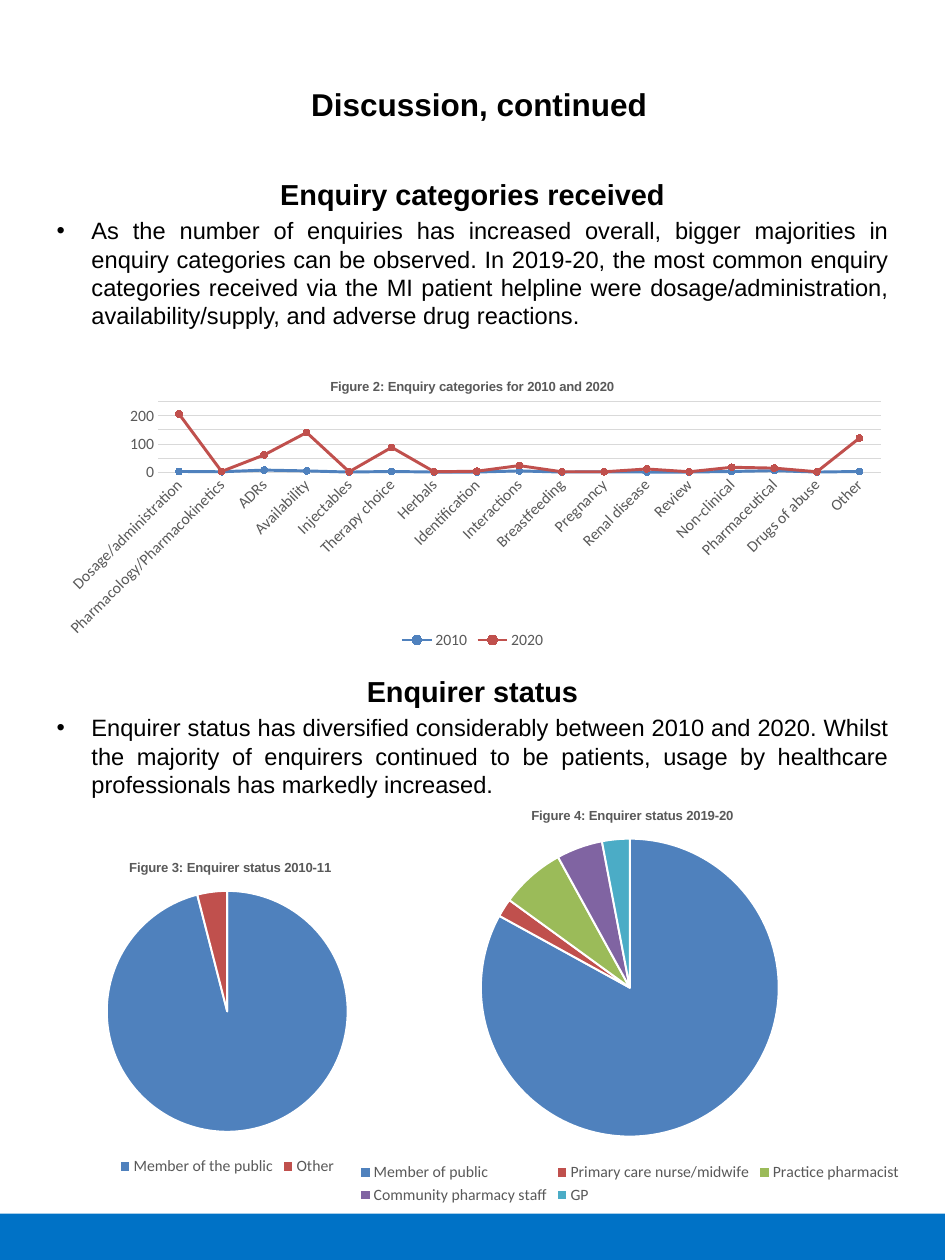
import pptx
import pptx.chart.data
import pptx.dml.color
import pptx.enum.chart
import pptx.enum.shapes
import pptx.enum.text
import pptx.oxml.ns
import pptx.oxml.xmlchemy
import pptx.util

Inches = pptx.util.Inches
Pt = pptx.util.Pt
qn = pptx.oxml.ns.qn
ALIGN = pptx.enum.text.PP_ALIGN
CHART = pptx.enum.chart.XL_CHART_TYPE


def rgb(value):
    """Turn a hex string into a colour."""
    return pptx.dml.color.RGBColor.from_string(value)


def sub(parent, tag, index=None, **attrs):
    """Add an XML child with attributes, at the end or at an index."""
    el = pptx.oxml.xmlchemy.OxmlElement(tag)
    for name, value in attrs.items():
        el.set(name, str(value))
    parent.insert(len(parent) if index is None else index, el)
    return el


def set_layout(parent, index, **values):
    """Give a chart part a manual layout in fractions of the chart."""
    for old in parent.findall(qn("c:layout")):
        parent.remove(old)
    manual = sub(sub(parent, "c:layout", index), "c:manualLayout")
    if "w" in values:
        sub(manual, "c:layoutTarget", val="inner")
    for mode in ("xMode", "yMode"):
        sub(manual, f"c:{mode}", val="edge")
    for name, value in values.items():
        sub(manual, f"c:{name}", val=value)


class Poster:
    """Style and current slide of the poster."""

    font = "Arial"
    chart_font = "Calibri"
    text = "000000"
    muted = "595959"
    rule = "D9D9D9"
    bar_fill = "0072C6"
    palette = ("4F81BD", "C0504D", "9BBB59", "8064A2", "4BACC6")

    def __init__(self, slide):
        """Keep the slide to draw on."""
        self.slide = slide

    def style(self, font, size, color, name, bold=False):
        """Set the look of a font."""
        font.size, font.name, font.bold = Pt(size), name, bold
        font.color.rgb = rgb(color)

    def bar(self, *box):
        """Draw a plain filled band."""
        sp = self.slide.shapes.add_shape(
            pptx.enum.shapes.MSO_SHAPE.RECTANGLE, *map(Inches, box))
        sp.shadow.inherit = False
        sp.fill.solid()
        sp.fill.fore_color.rgb = rgb(self.bar_fill)
        sp.line.fill.background()

    def run(self, p, text, size, bold):
        """Add a styled run to a paragraph."""
        r = p.add_run()
        r.text = text
        self.style(r.font, size, self.text, self.font, bold)

    def heading(self, box, text, size=22):
        """Add a text box with a centred heading and return its frame."""
        tf = self.slide.shapes.add_textbox(*map(Inches, box)).text_frame
        tf.word_wrap = True
        p = tf.paragraphs[0]
        p.alignment = ALIGN.CENTER
        self.run(p, text, size, True)
        return tf

    def section(self, box, title, body):
        """Add a heading followed by a justified bullet."""
        p = self.heading(box, title).add_paragraph()
        p.alignment = ALIGN.JUSTIFY
        pPr = p._p.get_or_add_pPr()
        pPr.set("marL", str(Inches(0.37)))
        pPr.set("indent", str(-Inches(0.37)))
        sub(pPr, "a:buFont", typeface=self.font)
        sub(pPr, "a:buChar", char="•")
        p.space_before = Pt(3.6)
        self.run(p, body, 18, False)

    def chart(self, kind, box, title, title_at, plot_at, cats, series):
        """Add a chart with title and legend and return it."""
        data = pptx.chart.data.CategoryChartData()
        data.categories = cats
        for name, values in series.items():
            data.add_series(name, values)
        chart = self.slide.shapes.add_chart(kind, *map(Inches, box), data).chart
        self.style(chart.font, 10, self.text, self.chart_font)
        chart.has_title = True
        r = chart.chart_title.text_frame.paragraphs[0].add_run()
        r.text = title
        self.style(r.font, 10, self.muted, self.font, True)
        set_layout(chart.chart_title._element, 1, **dict(zip("xy", title_at)))
        area = chart._chartSpace.find(f".//{qn('c:plotArea')}")
        set_layout(area, 0, **dict(zip("xywh", plot_at)))
        chart.has_legend = True
        chart.legend.position = pptx.enum.chart.XL_LEGEND_POSITION.BOTTOM
        chart.legend.include_in_layout = False
        self.style(chart.legend.font, 12, self.muted, self.chart_font)
        return chart

    def line_chart(self, *args):
        """Add a stacked line chart with round markers."""
        chart = self.chart(CHART.LINE_MARKERS_STACKED, *args)
        chart.plots[0].vary_by_categories = False
        for s, color in zip(chart.plots[0].series, self.palette):
            s.smooth = False
            s.format.line.color.rgb = rgb(color)
            s.format.line.width = Pt(2.25)
            s.marker.style = pptx.enum.chart.XL_MARKER_STYLE.CIRCLE
            s.marker.size = 5
            s.marker.format.fill.solid()
            s.marker.format.fill.fore_color.rgb = rgb(color)
            s.marker.format.line.color.rgb = rgb(color)
        cat, val = chart.category_axis, chart.value_axis
        for axis in (cat, val):
            axis.major_tick_mark = pptx.enum.chart.XL_TICK_MARK.NONE
            axis.minor_tick_mark = pptx.enum.chart.XL_TICK_MARK.NONE
            self.style(axis.tick_labels.font, 12, self.muted, self.chart_font)
        cat._element.find(f".//{qn('a:bodyPr')}").set("rot", "-2700000")
        val.minimum_scale, val.maximum_scale, val.major_unit = 0, 250, 50
        val.format.line.fill.background()
        val.has_major_gridlines = True
        for line in (cat.format.line, val.major_gridlines.format.line):
            line.color.rgb = rgb(self.rule)
            line.width = Pt(0.75)

    def pie_chart(self, *args):
        """Add a pie chart with white slice borders."""
        chart = self.chart(CHART.PIE, *args)
        chart.plots[0].vary_by_categories = True
        s = chart.plots[0].series[0]
        for i, color in zip(range(len(s.values)), self.palette):
            fmt = s.points[i].format
            fmt.fill.solid()
            fmt.fill.fore_color.rgb = rgb(color)
            fmt.line.color.rgb = rgb("FFFFFF")
            fmt.line.width = Pt(1.5)


def main():
    """Build the slide and save it."""
    prs = pptx.Presentation()
    prs.slide_width, prs.slide_height = Inches(10), Inches(13.33)
    poster = Poster(prs.slides.add_slide(prs.slide_layouts[6]))

    poster.bar(0, 12.84, 10, 0.49)
    poster.section(
        (0.5, 1.82, 9, 1.81), "Enquiry categories received",
        "As the number of enquiries has increased overall, bigger majorities in "
        "enquiry categories can be observed. In 2019-20, the most common enquiry "
        "categories received via the MI patient helpline were "
        "dosage/administration, availability/supply, and adverse drug reactions.")
    poster.line_chart(
        (0.5, 3.82, 9, 3.09), "Figure 2: Enquiry categories for 2010 and 2020",
        (0.33, 0.05), (0.13, 0.14, 0.85, 0.24),
        ["Dosage/administration", "Pharmacology/Pharmacokinetics", "ADRs",
         "Availability", "Injectables", "Therapy choice", "Herbals",
         "Identification", "Interactions", "Breastfeeding", "Pregnancy",
         "Renal disease", "Review", "Non-clinical", "Pharmaceutical",
         "Drugs of abuse", "Other"],
        {"2010": [2, 1, 7, 4, 0, 2, 0, 0, 4, 0, 1, 0, 0, 2, 5, 0, 2],
         "2020": [205, 1, 54, 137, 1, 86, 1, 3, 19, 1, 0, 11, 1, 15, 9, 1, 119]})
    poster.section(
        (0.5, 7.08, 9, 1.66), "Enquirer status",
        "Enquirer status has diversified considerably between 2010 and 2020. "
        "Whilst the majority of enquirers continued to be patients, usage by "
        "healthcare professionals has markedly increased.")
    poster.pie_chart(
        (0.28, 8.92, 4.25, 3.56), "Figure 3: Enquirer status 2010-11",
        (0.25, 0.04), (0.2, 0.14, 0.6, 0.72),
        ["Member of the public", "Other"], {"Series 1": [96, 4]})
    poster.pie_chart(
        (3.33, 8.34, 6.67, 4.44), "Figure 4: Enquirer status 2019-20",
        (0.34, 0.04), (0.26, 0.12, 0.48, 0.71),
        ["Member of public", "Primary care nurse/midwife", "Practice pharmacist",
         "Community pharmacy staff", "GP"], {"Series 1": [83, 2, 7, 5, 3]})
    title = poster.heading((0.57, 0.75, 9, 0.69), "Discussion, continued", 24)
    title.vertical_anchor = pptx.enum.text.MSO_ANCHOR.MIDDLE
    prs.save("out.pptx")


if __name__ == "__main__":
    main()
